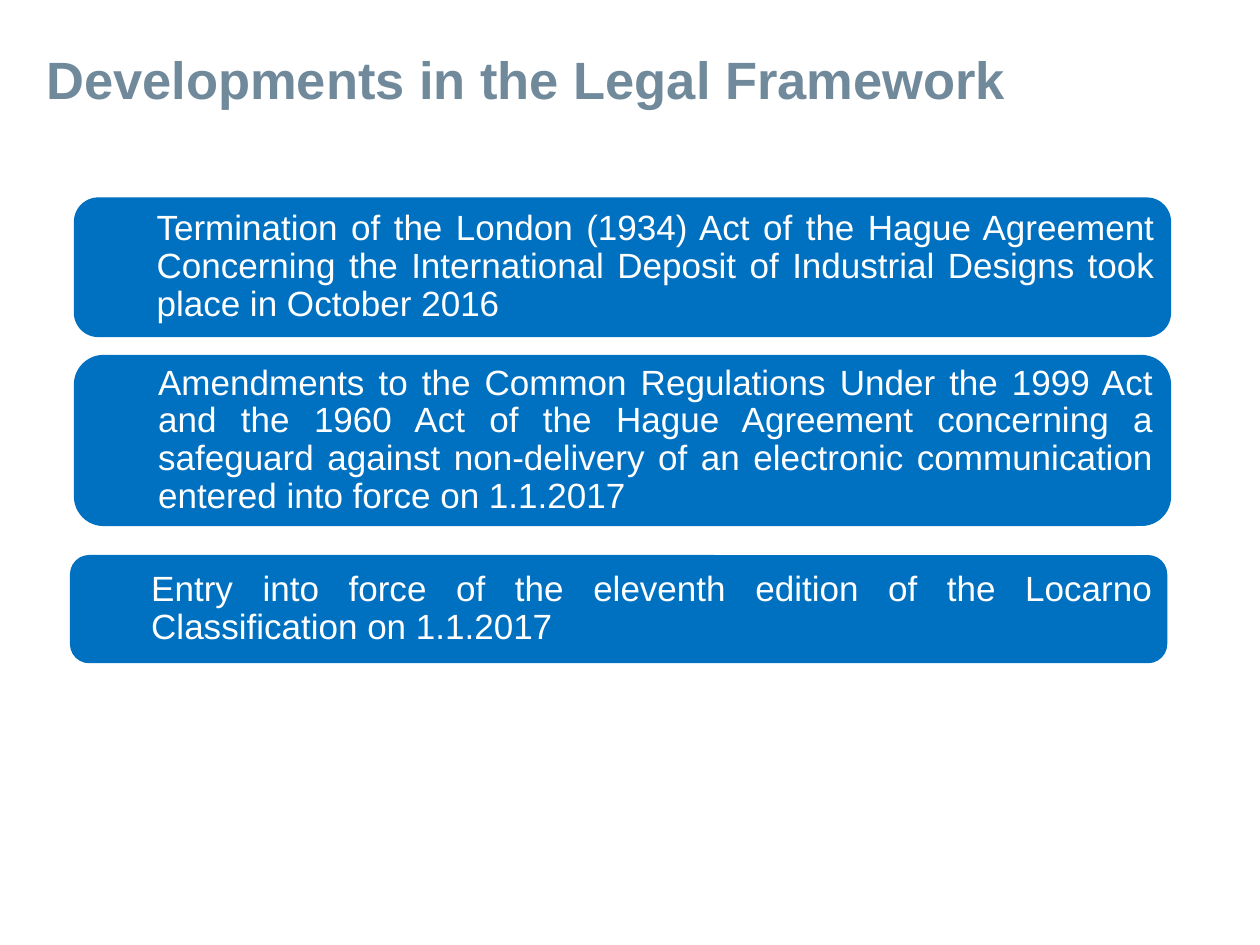
from typing import NamedTuple

from pptx import Presentation
from pptx.dml.color import RGBColor
from pptx.enum.shapes import MSO_SHAPE as Shape
from pptx.enum.text import MSO_ANCHOR as Anchor, PP_ALIGN as Align
from pptx.util import Pt

FONT = "Arial"
BLUE = "0070C0"
WHITE = "FFFFFF"
TITLE_COLOR = "70899B"
BAR_WIDTH = 625


class Bar(NamedTuple):
    left: float
    top: float
    height: float
    text: str


BARS = [
    Bar(43.2, 113.8, 77.8,
        "Termination of the London (1934) Act of the Hague Agreement Concerning "
        "the International Deposit of Industrial Designs took place in October 2016"),
    Bar(43.2, 203.8, 95.8,
        "Amendments to the Common Regulations Under the 1999 Act and the 1960 Act "
        "of the Hague Agreement concerning a safeguard against non-delivery of an "
        "electronic communication entered into force on 1.1.2017"),
    Bar(41, 318.2, 59.8,
        "Entry into force of the eleventh edition of the Locarno Classification "
        "on 1.1.2017"),
]


def color(value: str) -> RGBColor:
    return RGBColor.from_string(value)


def add_run(paragraph, text: str, size: float, text_color: str, bold: bool = False) -> None:
    run = paragraph.add_run()
    run.text = text
    run.font.name = FONT
    run.font.size = Pt(size)
    run.font.bold = bold
    run.font.color.rgb = color(text_color)


def add_title(slide, text: str) -> None:
    shape = slide.shapes.add_textbox(Pt(19.4), Pt(0), Pt(622), Pt(90))
    frame = shape.text_frame
    frame.word_wrap = True
    frame.vertical_anchor = Anchor.MIDDLE
    add_run(frame.paragraphs[0], text, 30, TITLE_COLOR, bold=True)


def add_bar(slide, bar: Bar) -> None:
    shape = slide.shapes.add_shape(
        Shape.ROUNDED_RECTANGLE,
        Pt(bar.left), Pt(bar.top), Pt(BAR_WIDTH), Pt(bar.height))
    shape.shadow.inherit = False
    shape.fill.solid()
    shape.fill.fore_color.rgb = color(BLUE)
    shape.line.color.rgb = color(BLUE)
    shape.line.width = Pt(2)

    frame = shape.text_frame
    frame.word_wrap = True
    frame.vertical_anchor = Anchor.MIDDLE
    frame.margin_left = Pt(42.5)
    frame.margin_top = frame.margin_right = frame.margin_bottom = Pt(4.3)
    paragraph = frame.paragraphs[0]
    paragraph.alignment = Align.JUSTIFY
    paragraph.line_spacing = 0.9
    add_run(paragraph, bar.text, 20, WHITE)


def main() -> None:
    presentation = Presentation()
    presentation.slide_width = Pt(720)
    presentation.slide_height = Pt(540)
    slide = presentation.slides.add_slide(presentation.slide_layouts[6])
    for bar in BARS:
        add_bar(slide, bar)
    add_title(slide, "Developments in the Legal Framework")
    presentation.save("out.pptx")


if __name__ == "__main__":
    main()
